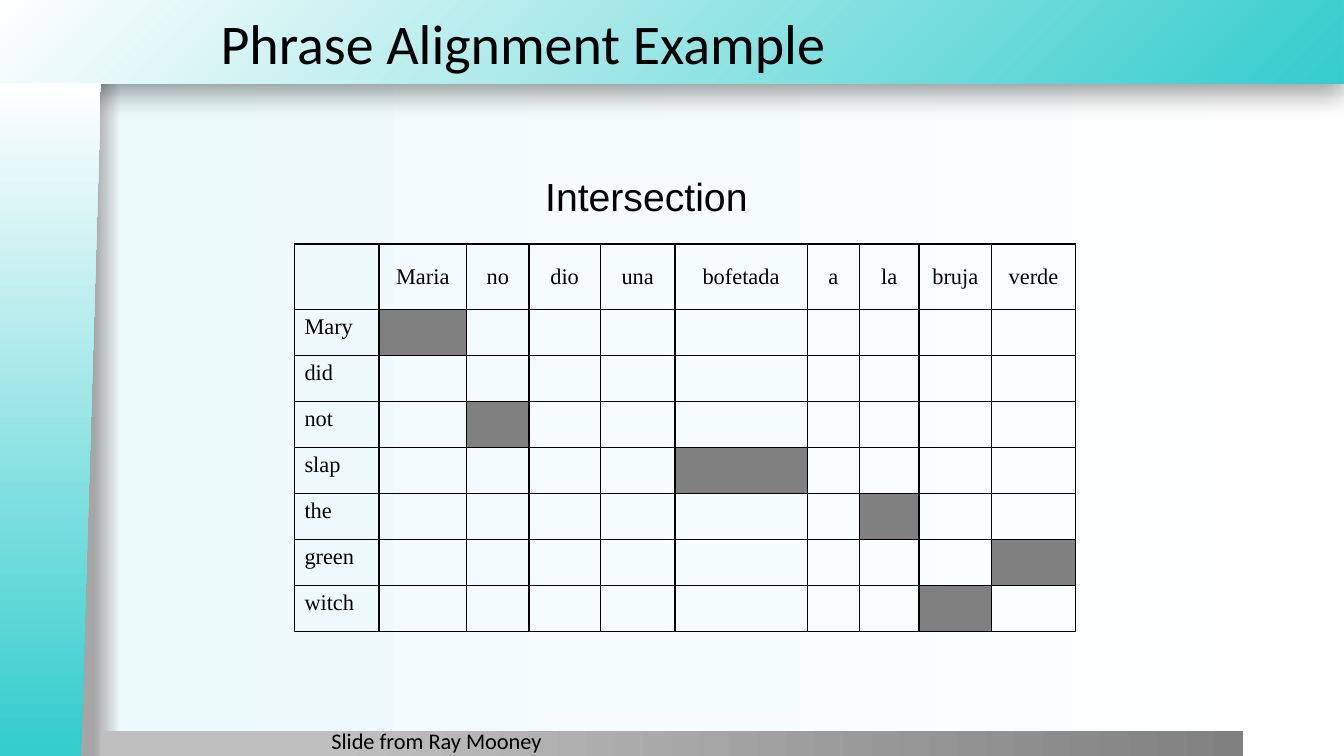
import lxml.etree
import pptx
import pptx.dml.color
import pptx.enum.shapes
import pptx.enum.text
import pptx.oxml.ns
import pptx.util

Cm = pptx.util.Cm
Pt = pptx.util.Pt
qn = pptx.oxml.ns.qn
SHAPE = pptx.enum.shapes.MSO_SHAPE
ANCHOR = pptx.enum.text.MSO_ANCHOR
ALIGN = pptx.enum.text.PP_ALIGN

# Content
TITLE = "Phrase Alignment Example"
HEADING = "Intersection"
CREDIT = "Slide from Ray Mooney"
SPANISH = ["Maria", "no", "dio", "una", "bofetada", "a", "la", "bruja", "verde"]
ENGLISH = ["Mary", "did", "not", "slap", "the", "green", "witch"]
ALIGNED = {("Mary", "Maria"), ("not", "no"), ("slap", "bofetada"),
           ("the", "la"), ("green", "verde"), ("witch", "bruja")}

COLORS = {"teal": "34CCCC", "white": "FFFFFF", "mist": "EDFBFB", "edge": "A6A6A6",
          "silver": "BFBFBF", "gray": "808080", "black": "000000"}

# Sizes in centimetres
PAGE_SIZE = (33.87, 19.05)
BANNER = (-0.03, 0, 33.88, 2.11)
FOOTER = (2.54, 18.42, 28.78, 0.66)
SIDEBAR = (-7.21, 9.32, 16.97, 2.54)
TABLE_CORNER = (7.42, 6.15)
COLUMN_WIDTHS = [2.13, 2.21, 1.57, 1.8, 1.88, 3.33, 1.32, 1.5, 1.83, 2.11]
ROW_HEIGHTS = [1.64] + [1.16] * len(ENGLISH)

LINEAR = '<a:lin ang="0" scaled="0"/>'
FROM_CORNER = '<a:path path="circle"><a:fillToRect l="100000" t="100000"/></a:path>'


def xml(text):
    """Parse one drawing element, adding the namespace to its tag."""
    tag, rest = text.split(" ", 1)
    return pptx.oxml.parse_xml(f"{tag} {pptx.oxml.ns.nsdecls('a')} {rest}")


def shade(owner, fill, stops, direction):
    """Give owner a gradient; stops are (percent, colour name)."""
    fill.solid()
    solid = owner.find(qn("a:solidFill"))
    marks = "".join(
        f'<a:gs pos="{percent * 1000}"><a:srgbClr val="{COLORS[name]}"/></a:gs>'
        for percent, name in stops)
    owner.replace(solid, xml(
        f'<a:gradFill rotWithShape="1"><a:gsLst>{marks}</a:gsLst>{direction}</a:gradFill>'))


def add_band(page, preset, place, stops, direction=LINEAR):
    band = page.shapes.add_shape(preset, *map(Cm, place))
    band.shadow.inherit = False
    band.line.fill.background()
    shade(band.element.spPr, band.fill, stops, direction)
    return band


def write(frame, text, font, size, align=ALIGN.LEFT):
    frame.text = text
    para = frame.paragraphs[0]
    para.alignment = align
    for span in para.runs:
        span.font.name = font
        span.font.size = Pt(size)
        span.font.color.rgb = pptx.dml.color.RGBColor.from_string(COLORS["black"])


def add_text(page, place, text, font, size, anchor=ANCHOR.TOP, wrap=True):
    box = page.shapes.add_textbox(*map(Cm, place))
    box.text_frame.word_wrap = wrap
    box.text_frame.vertical_anchor = anchor
    write(box.text_frame, text, font, size)


def add_borders(cell):
    properties = cell._tc.get_or_add_tcPr()
    for side in ("lnL", "lnR", "lnT", "lnB"):
        properties.append(xml(
            f'<a:{side} w="{Pt(1)}"><a:solidFill><a:srgbClr val="{COLORS["black"]}"/>'
            f'</a:solidFill></a:{side}>'))


def add_alignment_table(page):
    frame = page.shapes.add_table(
        len(ROW_HEIGHTS), len(COLUMN_WIDTHS), *map(Cm, TABLE_CORNER),
        Cm(sum(COLUMN_WIDTHS)), Cm(sum(ROW_HEIGHTS)))
    table = frame.table
    table.first_row = table.horz_banding = False
    for column, width in zip(table.columns, COLUMN_WIDTHS):
        column.width = Cm(width)
    for row, height in zip(table.rows, ROW_HEIGHTS):
        row.height = Cm(height)

    for r, english in enumerate([""] + ENGLISH):
        for c, spanish in enumerate([""] + SPANISH):
            cell = table.cell(r, c)
            add_borders(cell)
            if (english, spanish) in ALIGNED:
                cell.fill.solid()
                cell.fill.fore_color.rgb = pptx.dml.color.RGBColor.from_string(COLORS["gray"])
            else:
                cell.fill.background()
            if r == 0:
                cell.vertical_anchor = ANCHOR.MIDDLE
                write(cell.text_frame, spanish, "Times New Roman", 16, ALIGN.CENTER)
            elif c == 0:
                write(cell.text_frame, english, "Times New Roman", 16)


def main():
    deck = pptx.Presentation()
    deck.slide_width, deck.slide_height = map(Cm, PAGE_SIZE)
    page = deck.slides.add_slide(deck.slide_layouts[6])

    # Background
    background = page.background.fill
    background.solid()
    shade(page.element.find(".//" + qn("p:bgPr")), background,
          [(7, "edge"), (9, "mist"), (100, "white")], LINEAR)

    # Banner with its shadow, footer bar and slanted sidebar
    banner = add_band(page, SHAPE.RECTANGLE, BANNER,
                      [(0, "teal"), (100, "white")], FROM_CORNER)
    banner.element.spPr.find(qn("a:effectLst")).append(xml(
        f'<a:outerShdw blurRad="{Pt(20)}" dist="{Pt(6)}" dir="5400000" rotWithShape="0">'
        f'<a:srgbClr val="{COLORS["black"]}"><a:alpha val="40000"/></a:srgbClr></a:outerShdw>'))
    add_band(page, SHAPE.RECTANGLE, FOOTER, [(20, "silver"), (100, "gray")])
    sidebar = add_band(page, SHAPE.FLOWCHART_MANUAL_INPUT, SIDEBAR,
                       [(1, "teal"), (100, "white")])
    sidebar.rotation = 270
    sidebar.element.spPr.find(qn("a:xfrm")).set("flipV", "1")

    # Texts and table
    add_text(page, (5.31, 0, 28.58, 2.11), TITLE, "Calibri", 40, ANCHOR.MIDDLE)
    add_alignment_table(page)
    add_text(page, (13.49, 4.22, 5.69, 1.45), HEADING, "Arial", 28, wrap=False)
    add_text(page, (8.1, 18.21, 6.99, 0.84), CREDIT, "Calibri", 16)

    deck.save("out.pptx")


if __name__ == "__main__":
    main()
